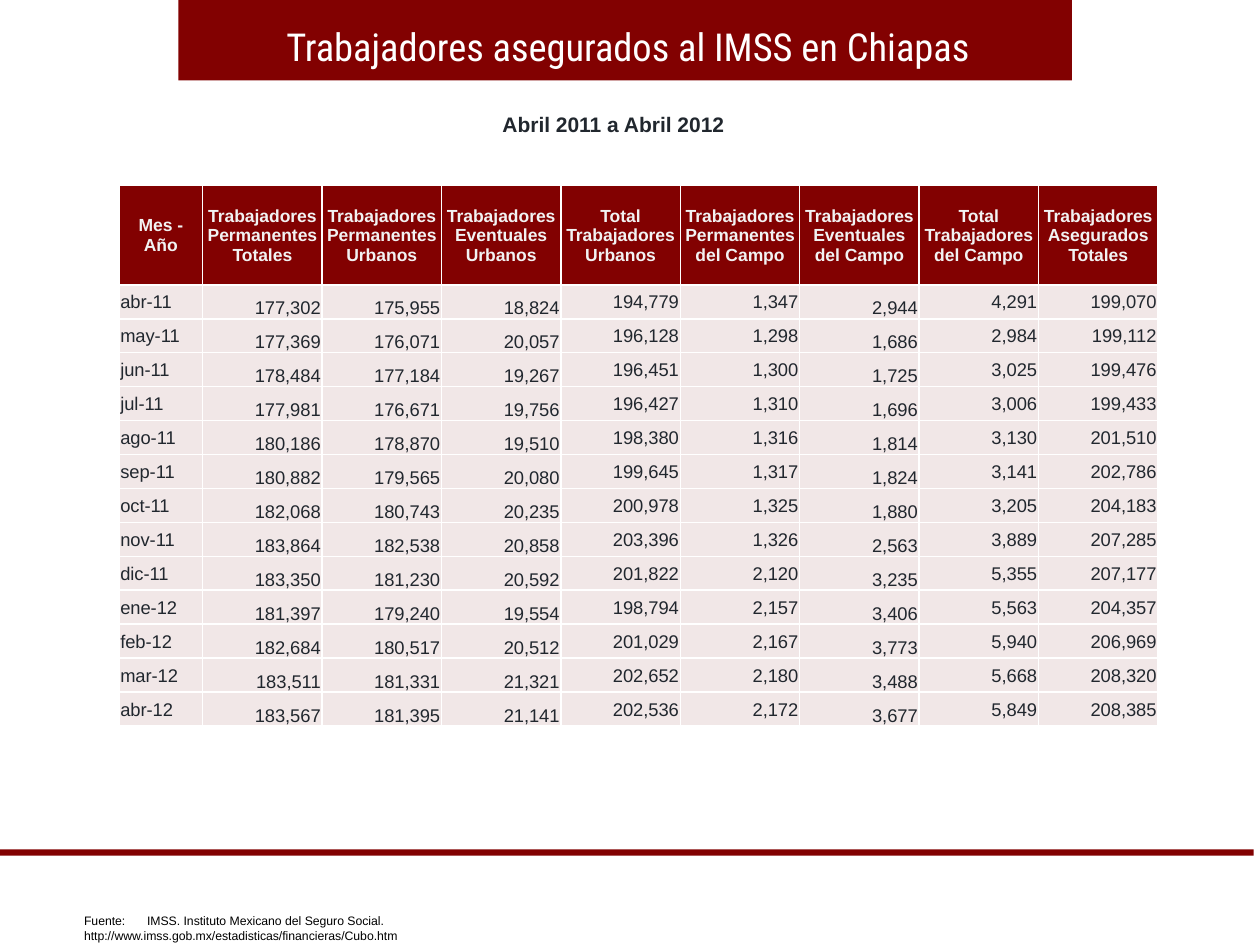
from lxml import etree
from pptx import Presentation
from pptx.dml.color import RGBColor
from pptx.enum import shapes, text
from pptx.oxml import ns
from pptx.util import Pt

MAROON = RGBColor(0x82, 0x01, 0x01)
PALE_ROSE = RGBColor(0xF1, 0xE7, 0xE7)
WHITE = RGBColor(0xFF, 0xFF, 0xFF)
OFF_WHITE = RGBColor(0xF2, 0xF2, 0xF2)
DARK = RGBColor(0x21, 0x27, 0x2E)
BLACK = RGBColor(0, 0, 0)

LEFT, CENTER, RIGHT = text.PP_ALIGN.LEFT, text.PP_ALIGN.CENTER, text.PP_ALIGN.RIGHT
MIDDLE, BOTTOM = text.MSO_ANCHOR.MIDDLE, text.MSO_ANCHOR.BOTTOM

HEADERS = [
    "Mes - Año",
    "Trabajadores Permanentes Totales",
    "Trabajadores Permanentes Urbanos",
    "Trabajadores Eventuales Urbanos",
    "Total Trabajadores Urbanos",
    "Trabajadores Permanentes del Campo",
    "Trabajadores Eventuales del Campo",
    "Total Trabajadores del Campo",
    "Trabajadores Asegurados Totales",
]
MONTHS = [
    ("abr-11", 177302, 175955, 18824, 194779, 1347, 2944, 4291, 199070),
    ("may-11", 177369, 176071, 20057, 196128, 1298, 1686, 2984, 199112),
    ("jun-11", 178484, 177184, 19267, 196451, 1300, 1725, 3025, 199476),
    ("jul-11", 177981, 176671, 19756, 196427, 1310, 1696, 3006, 199433),
    ("ago-11", 180186, 178870, 19510, 198380, 1316, 1814, 3130, 201510),
    ("sep-11", 180882, 179565, 20080, 199645, 1317, 1824, 3141, 202786),
    ("oct-11", 182068, 180743, 20235, 200978, 1325, 1880, 3205, 204183),
    ("nov-11", 183864, 182538, 20858, 203396, 1326, 2563, 3889, 207285),
    ("dic-11", 183350, 181230, 20592, 201822, 2120, 3235, 5355, 207177),
    ("ene-12", 181397, 179240, 19554, 198794, 2157, 3406, 5563, 204357),
    ("feb-12", 182684, 180517, 20512, 201029, 2167, 3773, 5940, 206969),
    ("mar-12", 183511, 181331, 21321, 202652, 2180, 3488, 5668, 208320),
    ("abr-12", 183567, 181395, 21141, 202536, 2172, 3677, 5849, 208385),
]
BOTTOM_COLUMNS = {1, 2, 3, 6}  # figures that sit on the lower edge of their cell


class SlideBuilder:
    """Holds the style and the current slide."""

    body_font = "Arial"
    title_font = "Roboto Condensed"

    def __init__(self, slide):
        self.slide = slide

    def set_text(self, frame, content, size, color, bold=False, align=LEFT, font=None):
        paragraph = frame.paragraphs[0]
        paragraph.text = content
        paragraph.alignment = align
        paragraph.font.name = font or self.body_font
        paragraph.font.size = Pt(size)
        paragraph.font.bold = bold
        paragraph.font.color.rgb = color

    def bar(self, left, top, width, height):
        shape = self.slide.shapes.add_shape(
            shapes.MSO_SHAPE.RECTANGLE, Pt(left), Pt(top), Pt(width), Pt(height))
        shape.shadow.inherit = False
        shape.fill.solid()
        shape.fill.fore_color.rgb = MAROON
        shape.line.fill.background()

    def title(self, content, left, top, width, height):
        shape = self.slide.shapes.title
        shape.left, shape.top, shape.width, shape.height = map(Pt, (left, top, width, height))
        frame = shape.text_frame
        frame.word_wrap = True
        frame.auto_size = text.MSO_AUTO_SIZE.NONE
        frame.vertical_anchor = text.MSO_ANCHOR.TOP
        self.set_text(frame, content, 22, WHITE, align=CENTER, font=self.title_font)
        # Bring the title in front of its band
        self.slide.shapes._spTree.append(shape._element)

    def label(self, content, left, top, width, height, size, color, bold=False, wrap=False):
        box = self.slide.shapes.add_textbox(Pt(left), Pt(top), Pt(width), Pt(height))
        box.text_frame.word_wrap = wrap
        self.set_text(box.text_frame, content, size, color, bold)

    def cell(self, cell, content, fill, size, color, bold, align, anchor):
        cell.margin_left = cell.margin_right = cell.margin_top = Pt(0.75)
        cell.margin_bottom = 0
        cell.vertical_anchor = anchor
        self.set_text(cell.text_frame, content, size, color, bold, align)
        properties = cell._tc.get_or_add_tcPr()
        for side in ("lnL", "lnR", "lnT", "lnB"):
            line = etree.SubElement(properties, ns.qn("a:" + side), w=str(Pt(1)))
            solid = etree.SubElement(line, ns.qn("a:solidFill"))
            etree.SubElement(solid, ns.qn("a:srgbClr"), val=str(WHITE))
        cell.fill.solid()
        cell.fill.fore_color.rgb = fill

    def table(self, headers, records, left, top, column_widths, row_heights):
        table = self.slide.shapes.add_table(
            len(row_heights), len(column_widths), Pt(left), Pt(top),
            Pt(sum(column_widths)), Pt(sum(row_heights))).table
        table.horz_banding = False
        for column, width in zip(table.columns, column_widths):
            column.width = Pt(width)
        for row, height in zip(table.rows, row_heights):
            row.height = Pt(height)
        for j, header in enumerate(headers):
            self.cell(table.cell(0, j), header, MAROON, 10, OFF_WHITE, True, CENTER, MIDDLE)
        for i, record in enumerate(records, start=1):
            for j, value in enumerate(record):
                content = f"{value:,}" if j else value
                self.cell(table.cell(i, j), content, PALE_ROSE, 10.5, DARK, False,
                          RIGHT if j else LEFT, BOTTOM if j in BOTTOM_COLUMNS else MIDDLE)


def main():
    presentation = Presentation()
    presentation.slide_width, presentation.slide_height = Pt(720), Pt(540)
    builder = SlideBuilder(presentation.slides.add_slide(presentation.slide_layouts[5]))

    # Title band and footer rule
    builder.bar(102, 0, 510.5, 46)
    builder.bar(0, 485.3, 716.4, 3.6)

    # Period and source
    builder.label("Abril 2011 a Abril 2012", 280, 60, 142.5, 21.6, 12, DARK, bold=True)
    builder.label("Fuente:\tIMSS. Instituto Mexicano del Seguro Social. "
                  "http://www.imss.gob.mx/estadisticas/financieras/Cubo.htm",
                  41, 518.5, 366, 15.8, 7, BLACK, wrap=True)

    builder.title("Trabajadores asegurados al IMSS en Chiapas", 105, 9.4, 507.6, 33.8)

    # Insured workers by month
    builder.table(HEADERS, MONTHS, 68, 105.8,
                  [47.8] + [68.25] * (len(HEADERS) - 1), [57] + [19.4] * len(MONTHS))

    presentation.save("out.pptx")


if __name__ == "__main__":
    main()
